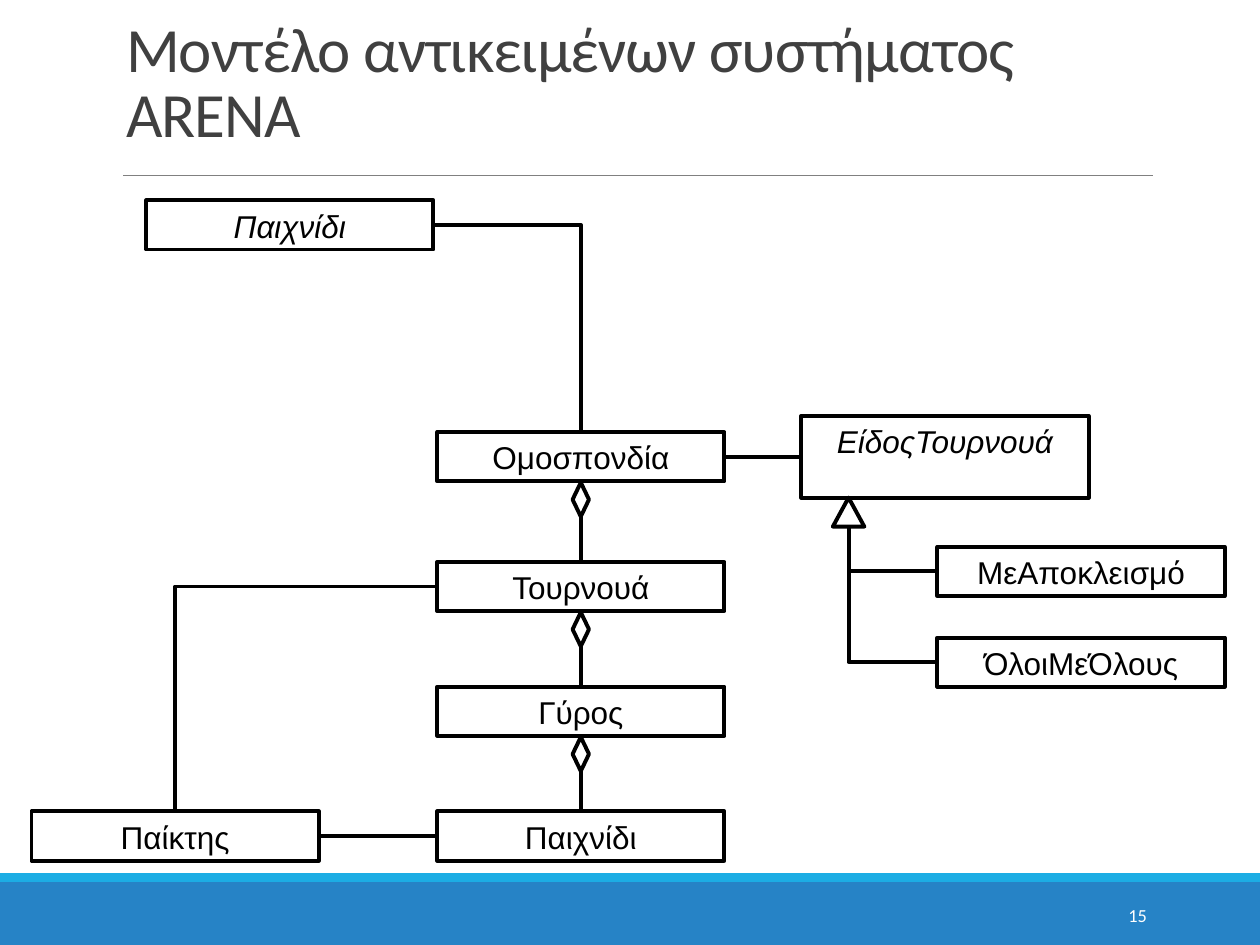
from dataclasses import dataclass

from pptx import Presentation
from pptx.dml.color import RGBColor
from pptx.enum.shapes import MSO_CONNECTOR as Connector, MSO_SHAPE as Shape
from pptx.enum.text import MSO_ANCHOR as Anchor, MSO_AUTO_SIZE as AutoSize, PP_ALIGN as Align
from pptx.oxml.ns import qn
from pptx.util import Inches, Pt
from lxml.etree import SubElement


@dataclass(frozen=True)
class Theme:
    ink: RGBColor = RGBColor(0, 0, 0)
    paper: RGBColor = RGBColor(255, 255, 255)
    title: RGBColor = RGBColor(0x40, 0x40, 0x40)
    rule: RGBColor = RGBColor(0x80, 0x80, 0x80)
    band: RGBColor = RGBColor(0x26, 0x83, 0xC6)
    stripe: RGBColor = RGBColor(0x1C, 0xAD, 0xE4)
    heading_font: str = "Calibri"
    class_font: str = "Arial"
    title_size: float = 36
    class_size: float = 18
    number_size: float = 10.5
    line_width: float = 2.25
    rule_width: float = 0.5


@dataclass(frozen=True)
class ClassBox:
    name: str
    left: float
    top: float
    height: float = 0.39
    abstract: bool = False


THEME = Theme()
BOX_WIDTH = 2.28
TOP, LEFT, BOTTOM, RIGHT = range(4)

GAME = ClassBox("Παιχνίδι", 1.16, 1.59, abstract=True)
STYLE = ClassBox("ΕίδοςΤουρνουά", 6.36, 3.3, height=0.65, abstract=True)
PLAYER = ClassBox("Παίκτης", 0.25, 6.44)
# Each class in the chain aggregates the next one
CHAIN = [
    ClassBox("Ομοσπονδία", 3.47, 3.43),
    ClassBox("Τουρνουά", 3.47, 4.46),
    ClassBox("Γύρος", 3.47, 5.45),
    ClassBox("Παιχνίδι", 3.47, 6.44),
]
SUBCLASSES = [
    ClassBox("ΜεΑποκλεισμό", 7.44, 4.34),
    ClassBox("ΌλοιΜεΌλους", 7.44, 5.06),
]


def style_text(paragraph, font_name: str, size: float, color: RGBColor, align) -> None:
    paragraph.alignment = align
    paragraph.font.name = font_name
    paragraph.font.size = Pt(size)
    paragraph.font.color.rgb = color


def add_block(slide, kind, left: float, top: float, width: float, height: float, fill=None, outlined=True):
    shape = slide.shapes.add_shape(kind, Inches(left), Inches(top), Inches(width), Inches(height))
    shape.shadow.inherit = False
    if fill is None:
        shape.fill.background()
    else:
        shape.fill.solid()
        shape.fill.fore_color.rgb = fill
    if outlined:
        shape.line.color.rgb = THEME.ink
        shape.line.width = Pt(THEME.line_width)
    else:
        shape.line.fill.background()
    return shape


def add_class(slide, box: ClassBox):
    shape = add_block(slide, Shape.RECTANGLE, box.left, box.top, BOX_WIDTH, box.height)
    frame = shape.text_frame
    frame.vertical_anchor = Anchor.TOP
    frame.text = box.name
    paragraph = frame.paragraphs[0]
    style_text(paragraph, THEME.class_font, THEME.class_size, THEME.ink, Align.CENTER)
    paragraph.font.italic = box.abstract
    return shape


def add_line(slide, start, end, kind=Connector.STRAIGHT, color=THEME.ink, width=THEME.line_width):
    connector = slide.shapes.add_connector(kind, *start, *end)
    connector.line.color.rgb = color
    connector.line.width = Pt(width)
    SubElement(connector._element.spPr, qn("a:effectLst"))
    return connector


def side_point(shape, side: int) -> tuple:
    middle_x, middle_y = shape.left + shape.width // 2, shape.top + shape.height // 2
    return {
        TOP: (middle_x, shape.top),
        LEFT: (shape.left, middle_y),
        BOTTOM: (middle_x, shape.top + shape.height),
        RIGHT: (shape.left + shape.width, middle_y),
    }[side]


def join(slide, first, first_side: int, second, second_side: int) -> None:
    line = add_line(slide, side_point(first, first_side), side_point(second, second_side))
    line.begin_connect(first, first_side)
    line.end_connect(second, second_side)


def add_corner(slide, first, first_side: int, second, second_side: int) -> None:
    """Draw a one-bend connector that leaves horizontally and arrives vertically."""
    connector = add_line(slide, side_point(first, first_side), side_point(second, second_side), Connector.ELBOW)
    connector._element.spPr.find(qn("a:prstGeom")).set("prst", "bentConnector2")


def add_aggregation(slide, whole, part) -> None:
    width, height = 0.13, 0.27
    center, bottom = side_point(whole, BOTTOM)
    diamond = add_block(slide, Shape.DIAMOND, center.inches - width / 2, bottom.inches + 0.01,
                        width, height, THEME.paper) if hasattr(center, "inches") else add_block(
                            slide, Shape.DIAMOND, center / Inches(1) - width / 2,
                            bottom / Inches(1) + 0.01, width, height, THEME.paper)
    join(slide, diamond, BOTTOM, part, TOP)


def add_frame(slide) -> None:
    # Footer bands and the rule under the title
    add_block(slide, Shape.RECTANGLE, 0, 7, 10, 0.5, THEME.band, outlined=False)
    add_block(slide, Shape.RECTANGLE, 0, 6.93, 10, 0.07, THEME.stripe, outlined=False)
    add_line(slide, (Inches(0.98), Inches(1.39)), (Inches(9.15), Inches(1.39)),
             color=THEME.rule, width=THEME.rule_width)

    # Title
    title = slide.shapes.title
    title.left, title.top, title.width, title.height = map(Inches, (0.9, 0.31, 8.25, 0.93))
    frame = title.text_frame
    frame.text = "Μοντέλο αντικειμένων συστήματος ARENA"
    frame.auto_size = AutoSize.NONE
    frame.vertical_anchor = Anchor.BOTTOM
    paragraph = frame.paragraphs[0]
    paragraph.line_spacing = 0.85
    style_text(paragraph, THEME.heading_font, THEME.title_size, THEME.title, Align.LEFT)
    paragraph.runs[0]._r.get_or_add_rPr().set("spc", "-50")

    # Slide number
    number = slide.shapes.add_textbox(*map(Inches, (8.12, 7.06, 1.08, 0.4))).text_frame
    number.word_wrap = True
    number.vertical_anchor = Anchor.MIDDLE
    number.text = "15"
    style_text(number.paragraphs[0], THEME.heading_font, THEME.number_size, THEME.paper, Align.RIGHT)


def add_diagram(slide) -> None:
    # Classes
    game, style, player = (add_class(slide, box) for box in (GAME, STYLE, PLAYER))
    chain = [add_class(slide, box) for box in CHAIN]
    subclasses = [add_class(slide, box) for box in SUBCLASSES]
    league, tournament, _, match = chain

    # Aggregations and associations
    for whole, part in zip(chain, chain[1:]):
        add_aggregation(slide, whole, part)
    join(slide, league, RIGHT, style, LEFT)
    join(slide, player, RIGHT, match, LEFT)
    add_corner(slide, game, RIGHT, league, TOP)
    add_corner(slide, tournament, LEFT, player, TOP)

    # Inheritance
    triangle = add_block(slide, Shape.ISOSCELES_TRIANGLE, 6.61, 3.95, 0.25, 0.23, THEME.paper)
    for subclass in subclasses:
        add_corner(slide, subclass, LEFT, triangle, BOTTOM)


def main() -> None:
    presentation = Presentation()
    presentation.slide_width, presentation.slide_height = Inches(10), Inches(7.5)
    slide = presentation.slides.add_slide(presentation.slide_layouts[5])
    add_frame(slide)
    add_diagram(slide)
    presentation.save("out.pptx")


if __name__ == "__main__":
    main()
